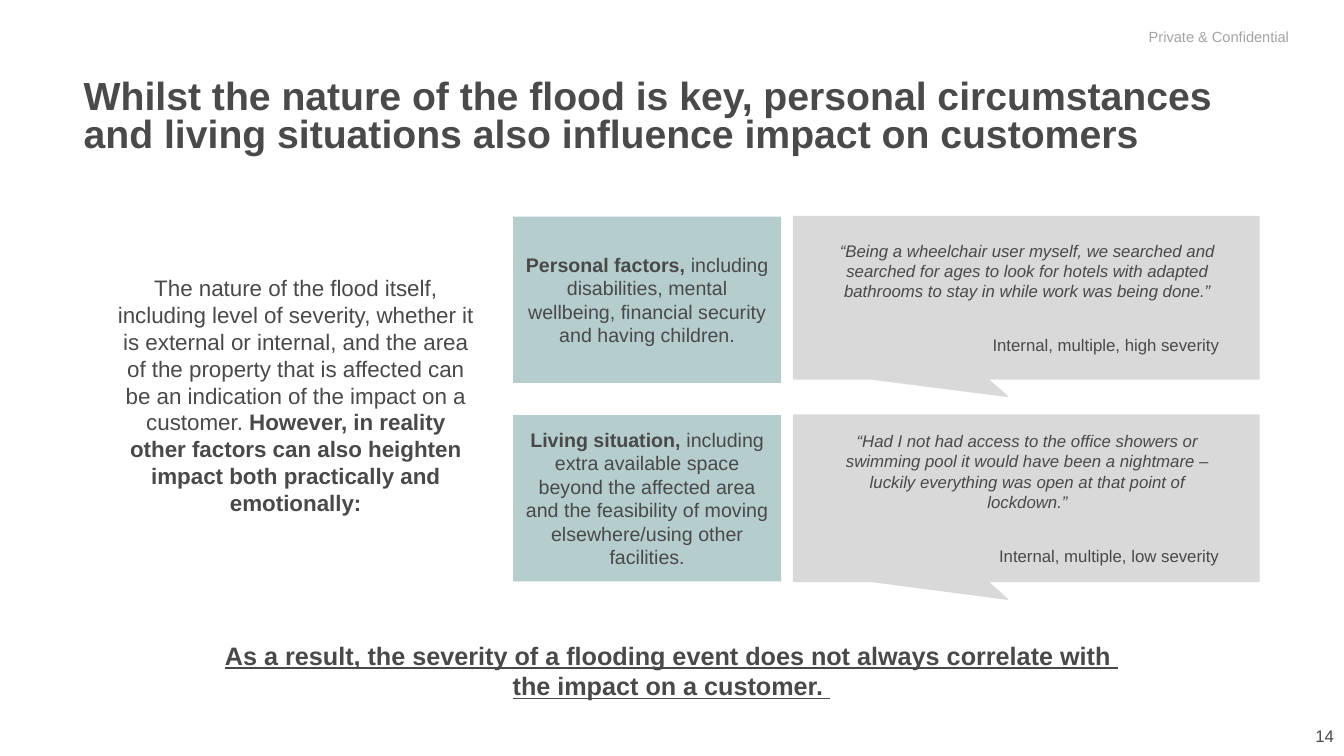
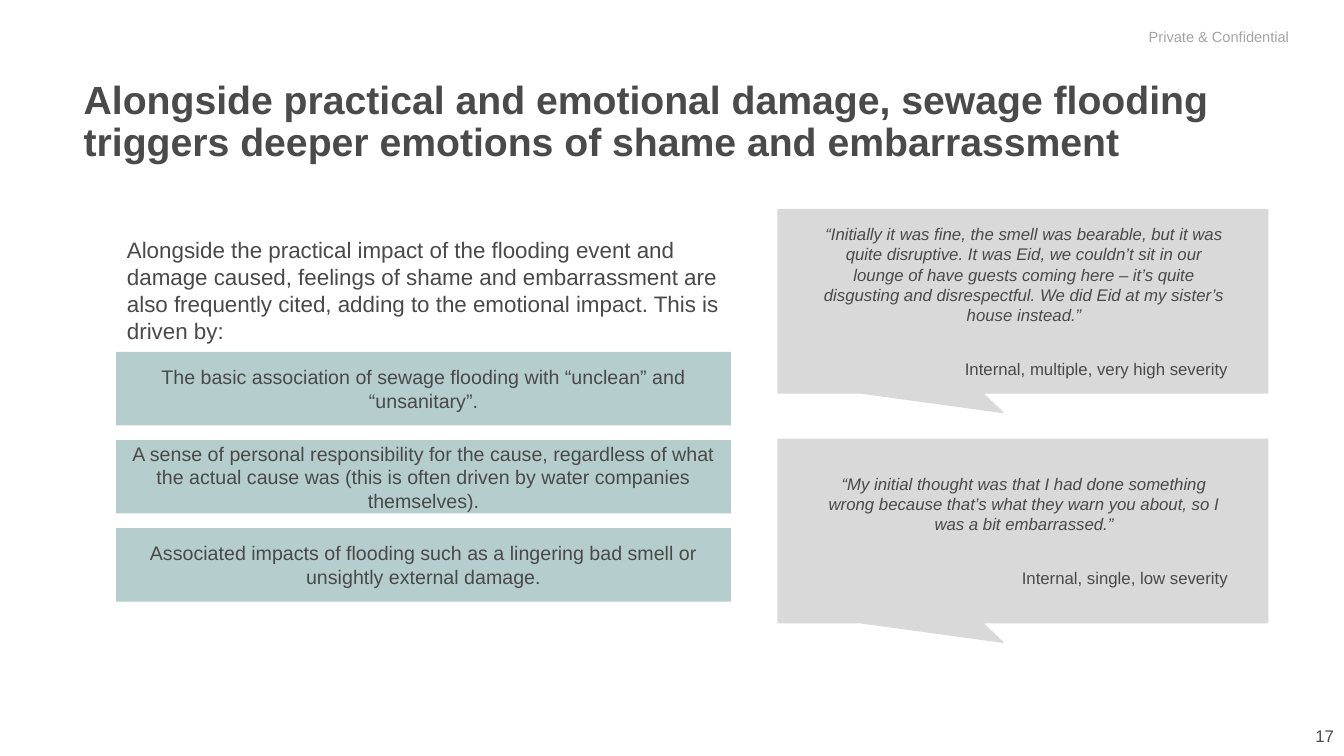
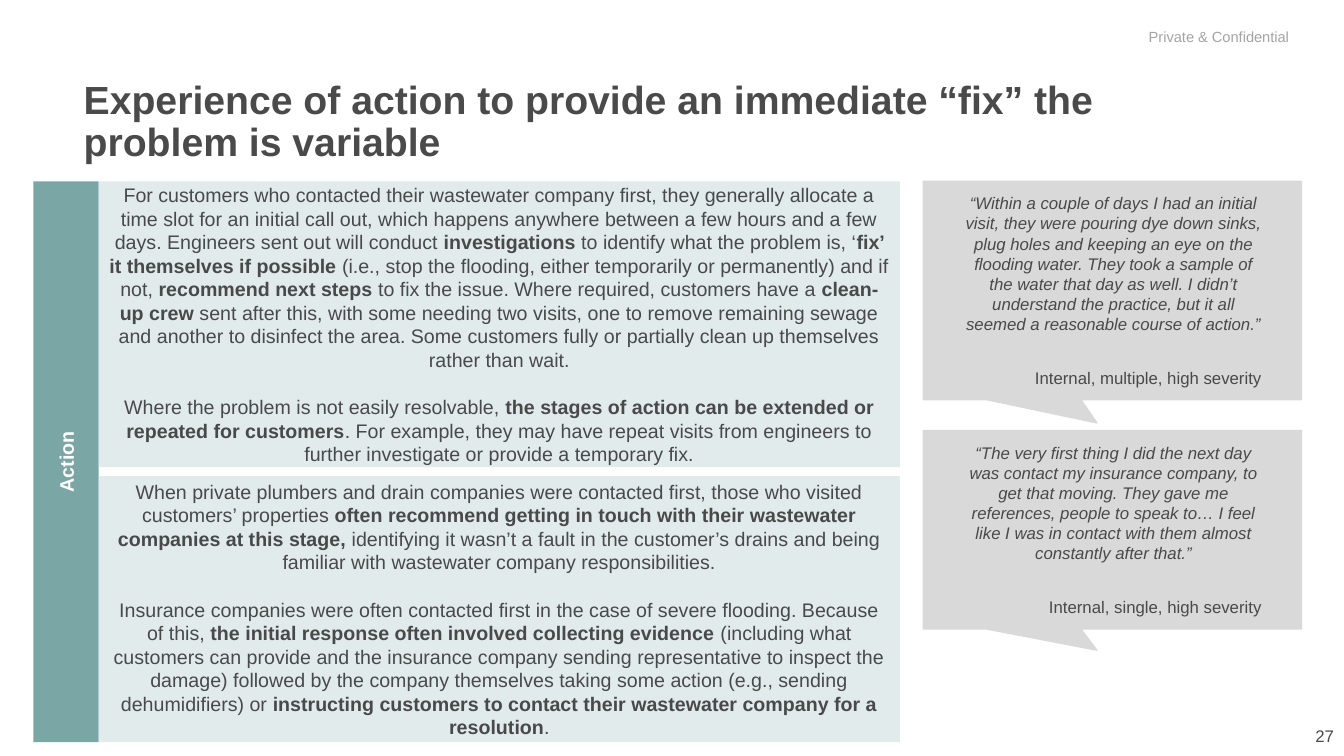
"""Build three slides on how flooding affects customers."""
from pptx import Presentation
from pptx.dml.color import RGBColor
from pptx.enum.shapes import MSO_SHAPE
from pptx.enum.text import MSO_ANCHOR, MSO_AUTO_SIZE, PP_ALIGN
from pptx.util import Cm, Pt

FONT = "Arial"
INK, TITLE_INK, MUTED, WHITE = "494949", "4A4A4A", "A4A4A4", "FFFFFF"
TEAL, SAGE, MIST, GREY = "7BA6A6", "B5CDCD", "E1EBEB", "D9D9D9"
LEFT, CENTER, RIGHT = PP_ALIGN.LEFT, PP_ALIGN.CENTER, PP_ALIGN.RIGHT


def rgb(value):
    """Turn a hex string into a colour."""
    return RGBColor.from_string(value)


def add_text(tf, text, size=14, color=INK, align=CENTER, bold=False, italic=False,
             underline=False, before=0, after=0, spacing=None):
    """Add one paragraph, in which ** switches bold on and off."""
    p = tf.paragraphs[0]
    if p.runs:
        p = tf.add_paragraph()
        p.space_before = Pt(before)
    p.space_after = Pt(after)
    p.alignment = align
    if spacing:
        p.line_spacing = spacing
    for i, part in enumerate(text.split("**")):
        if part:
            r = p.add_run()
            r.text = part
            font = r.font
            font.name, font.size = FONT, Pt(size)
            font.bold = bold or i % 2 == 1
            font.italic, font.underline = italic, underline
            font.color.rgb = rgb(color)


def set_frame(tf, anchor, insets=(0.25, 0.13, 0.25, 0.13)):
    """Set wrapping, anchor and insets of a text frame."""
    tf.word_wrap = True
    tf.auto_size = MSO_AUTO_SIZE.NONE
    tf.vertical_anchor = anchor
    tf.margin_left, tf.margin_top, tf.margin_right, tf.margin_bottom = map(Cm, insets)


def add_box(s, place, fill, *texts, kind=MSO_SHAPE.RECTANGLE, **fmt):
    """Add a filled shape with centred paragraphs and return it."""
    sp = s.shapes.add_shape(kind, *map(Cm, place))
    sp.shadow.inherit = False
    sp.fill.solid()
    sp.fill.fore_color.rgb = rgb(fill)
    sp.line.fill.background()
    set_frame(sp.text_frame, MSO_ANCHOR.MIDDLE)
    for text in texts:
        add_text(sp.text_frame, text, **fmt)
    return sp


def add_note(s, place, *texts, anchor=MSO_ANCHOR.TOP, **fmt):
    """Add a text box without fill."""
    tf = s.shapes.add_textbox(*map(Cm, place)).text_frame
    set_frame(tf, anchor)
    for text in texts:
        add_text(tf, text, **fmt)


def add_quote(s, place, quote, source):
    """Add a speech callout with a quote and its source."""
    sp = add_box(s, place, GREY, kind=MSO_SHAPE.RECTANGULAR_CALLOUT)
    sp.adjustments[0], sp.adjustments[1] = -0.041, 0.607
    sp.line.color.rgb = rgb(GREY)
    sp.line.width = Pt(1)
    tf = sp.text_frame
    set_frame(tf, MSO_ANCHOR.MIDDLE, (1.06, 1, 1, 1))
    add_text(tf, quote, size=12, italic=True, after=6)
    add_text(tf, source, size=12, align=RIGHT, before=18, after=6)


def add_slide(prs, title, number, spacing=0.9):
    """Add a slide with title, confidentiality label and page number."""
    s = prs.slides.add_slide(prs.slide_layouts[5])
    sp = s.shapes.title
    sp.left, sp.top, sp.width, sp.height = map(Cm, (2.11, 1.9, 29.4, 2.21))
    set_frame(sp.text_frame, MSO_ANCHOR.TOP, (0, 0.13, 0.25, 0.13))
    add_text(sp.text_frame, title, size=28, color=TITLE_INK, align=LEFT, bold=True,
             spacing=spacing)
    add_box(s, (28.7, 0.48, 4.14, 0.89), WHITE, "Private & Confidential",
            size=10.5, color=MUTED, align=LEFT)
    add_note(s, (26.25, 18.03, 7.62, 1.02), str(number), anchor=MSO_ANCHOR.MIDDLE,
             size=12, color=TITLE_INK, align=RIGHT)
    return s


def build_circumstances(prs):
    """Build the slide on personal circumstances."""
    s = add_slide(prs, "Whilst the nature of the flood is key, personal circumstances and "
                  "living situations also influence impact on customers", 14, spacing=0.8)
    rows = [
        ("**Personal factors, **including disabilities, mental wellbeing, financial "
         "security and having children.", 4.09,
         "“Being a wheelchair user myself, we searched and searched for ages to look for "
         "hotels with adapted bathrooms to stay in while work was being done.”",
         "Internal, multiple, high severity"),
        ("**Living situation, **including extra available space beyond the affected area "
         "and the feasibility of moving elsewhere/using other facilities.", 4.19,
         "“Had I not had access to the office showers or swimming pool it would have been "
         "a nightmare – luckily everything was open at that point of lockdown.”",
         "Internal, multiple, low severity"),
    ]
    for i, (factor, quote_height, quote, source) in enumerate(rows):
        top = 5.46 + 5 * i
        add_box(s, (12.93, top, 6.76, 4.19), SAGE, factor)
        add_quote(s, (20, top, 11.73, quote_height), quote, source)
    add_note(s, (1.19, 16, 31.47, 1.8),
             "As a result, the severity of a flooding event does not always correlate with ",
             "the impact on a customer. ", size=18, bold=True, underline=True)
    add_note(s, (2.69, 6.78, 9.53, 7.09),
             "The nature of the flood itself, including level of severity, whether it is "
             "external or internal, and the area of the property that is affected can be an "
             "indication of the impact on a customer. **However, in reality other factors "
             "can also heighten impact both practically and emotionally:**", size=16)


def build_shame(prs):
    """Build the slide on shame and embarrassment."""
    s = add_slide(prs, "Alongside practical and emotional damage, sewage flooding triggers "
                  "deeper emotions of shame and embarrassment", 17)
    quotes = [
        ("“Initially it was fine, the smell was bearable, but it was quite disruptive. It "
         "was Eid, we couldn’t sit in our lounge of have guests coming here – it’s quite "
         "disgusting and disrespectful. We did Eid at my sister’s house instead.”",
         "Internal, multiple, very high severity"),
        ("“My initial thought was that I had done something wrong because that’s what they "
         "warn you about, so I was a bit embarrassed.”",
         "Internal, single, low severity"),
    ]
    for i, (quote, source) in enumerate(quotes):
        add_quote(s, (19.61, 5.28 + 5.79 * i, 12.34, 4.62), quote, source)
    add_note(s, (2.95, 5.82, 15.49, 3),
             "Alongside the practical impact of the flooding event and damage caused, "
             "feelings of shame and embarrassment are also frequently cited, adding to the "
             "emotional impact. This is driven by:", size=16, align=LEFT)
    drivers = [
        "The basic association of sewage flooding with “unclean” and “unsanitary”.",
        "A sense of personal responsibility for the cause, regardless of what the actual "
        "cause was (this is often driven by water companies themselves).",
        "Associated impacts of flooding such as a lingering bad smell or unsightly "
        "external damage.",
    ]
    for i, driver in enumerate(drivers):
        add_box(s, (2.93, 8.87 + 2.22 * i, 15.49, 1.85), SAGE, driver)


def build_action(prs):
    """Build the slide on action taken."""
    s = add_slide(prs, "Experience of action to provide an immediate “fix” the problem is "
                  "variable", 27)
    left, top, bottom, strip = 2.49, 4.57, 18.7, 1.65
    length = bottom - top
    add_box(s, (left - (strip + length) / 2, (top + bottom - strip) / 2, length, strip),
            TEAL, "Action", color=WHITE, bold=True).rotation = 270
    add_box(s, (left, 12, 20.19, bottom - 12), MIST,
            "When private plumbers and drain companies were contacted first, those who "
            "visited customers’ properties **often recommend getting in touch with their "
            "wastewater companies at this stage, **identifying it wasn’t a fault in the "
            "customer’s drains and being familiar with wastewater company responsibilities.",
            "Insurance companies were often contacted first in the case of severe flooding. "
            "Because of this, **the initial response often involved collecting evidence** "
            "(including what customers can provide and the insurance company sending "
            "representative to inspect the damage) followed by the company themselves "
            "taking some action (e.g., sending dehumidifiers) or **instructing customers to "
            "contact their wastewater company for a resolution**.", before=17)
    add_box(s, (left, top, 20.19, 7.2), MIST,
            "For customers who contacted their wastewater company first, they generally "
            "allocate a time slot for an initial call out, which happens anywhere between a "
            "few hours and a few days. Engineers sent out will conduct **investigations** to "
            "identify what the problem is, ‘**fix’ it themselves if possible** (i.e., stop "
            "the flooding, either temporarily or permanently) and if not, **recommend next "
            "steps **to fix the issue. Where required, customers have a **clean-up crew** "
            "sent after this, with some needing two visits, one to remove remaining sewage "
            "and another to disinfect the area. Some customers fully or partially clean up "
            "themselves rather than wait.",
            "Where the problem is not easily resolvable, **the stages of action can be "
            "extended or repeated for customers**. For example, they may have repeat visits "
            "from engineers to further investigate or provide a temporary fix.", before=17)
    add_quote(s, (23.27, top, 9.53, 5.5),
              "“Within a couple of days I had an initial visit, they were pouring dye down "
              "sinks, plug holes and keeping an eye on the flooding water. They took a "
              "sample of the water that day as well. I didn’t understand the practice, but "
              "it all seemed a reasonable course of action.”",
              "Internal, multiple, high severity")
    add_quote(s, (23.27, 10.85, 9.53, 5),
              "“The very first thing I did the next day was contact my insurance company, "
              "to get that moving. They gave me references, people to speak to… I feel like "
              "I was in contact with them almost constantly after that.”",
              "Internal, single, high severity")


def main():
    """Build and save the presentation."""
    prs = Presentation()
    prs.slide_width, prs.slide_height = Cm(33.87), Cm(19.05)
    build_circumstances(prs)
    build_shame(prs)
    build_action(prs)
    prs.save("out.pptx")


if __name__ == "__main__":
    main()
